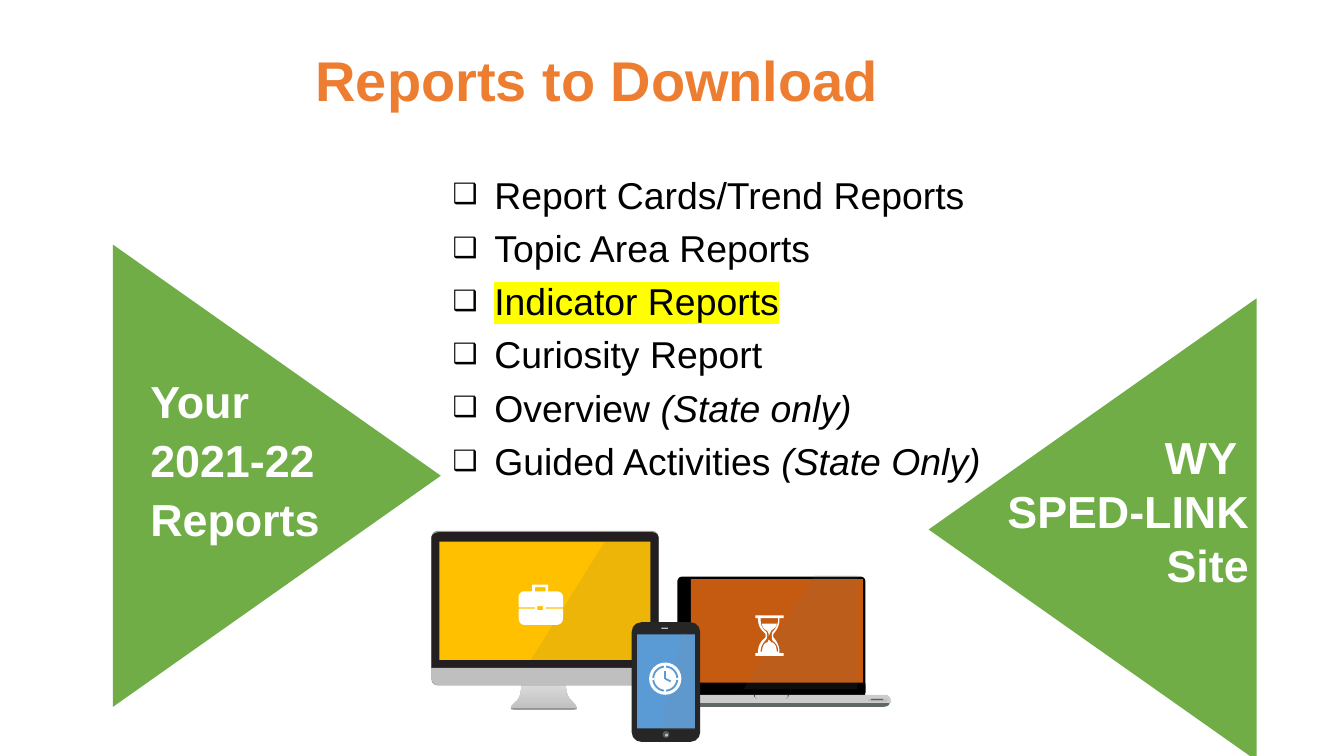
from dataclasses import dataclass
from pptx import Presentation
from pptx.dml.color import RGBColor
from pptx.enum.shapes import MSO_CONNECTOR, MSO_SHAPE
from pptx.enum.text import PP_ALIGN
from pptx.oxml.ns import qn
from pptx.util import Pt
from lxml.etree import SubElement

SCALE = 9144


@dataclass(frozen=True)
class Theme:
    font: str = "Arial"
    title_size: int = 30
    label_size: int = 24
    list_size: int = 20
    title: str = "ED7D31"
    arrow: str = "70AD47"
    ink: str = "000000"
    white: str = "FFFFFF"
    marker: str = "FFFF00"
    amber: str = "FFC000"
    rust: str = "C55A11"
    blue: str = "5B9BD5"
    bezel: str = "231F20"
    phone: str = "262626"
    charcoal: str = "595959"
    slate: str = "5F6767"
    graphite: str = "4D4D4D"
    gray: str = "808080"
    steel: str = "999999"
    silver: str = "BFBFBF"
    pale: str = "CCCCCC"
    shine: str = "D9D9D9"


THEME = Theme()


def px(value):
    return round(value * SCALE)


def rgb(color):
    return RGBColor.from_string(color)


def apply(target, values):
    for name, value in values.items():
        setattr(target, name, value)


def paint(shape, color, alpha=100):
    shape.shadow.inherit = False
    shape.line.fill.background()
    shape.fill.solid()
    shape.fill.fore_color.rgb = rgb(color)
    if alpha < 100:
        tint = shape.fill._xPr.find(".//" + qn("a:srgbClr"))
        SubElement(tint, qn("a:alpha"), val=str(alpha * 1000))
    return shape


def preset(page, kind, box, part, color, corner=None):
    left, top, width, height = part
    shape = page.shapes.add_shape(
        kind, px(box[0] + left), px(box[1] + top), px(width), px(height))
    if corner is not None:
        shape.adjustments[0] = corner
    return paint(shape, color)


def flatten(contour, steps=8):
    points = [contour[0]]
    for step in contour[1:]:
        if len(step) == 2:
            points.append(step)
            continue
        start, first, second, end = points[-1], step[:2], step[2:4], step[4:]
        for index in range(1, steps + 1):
            t = index / steps
            u = 1 - t
            points.append(tuple(
                u**3 * a + 3 * u * u * t * b + 3 * u * t * t * c + t**3 * d
                for a, b, c, d in zip(start, first, second, end)))
    return points


def outline(page, box, contours, color, alpha=100):
    builder = None
    for contour in contours:
        points = [(px(box[0] + x), px(box[1] + y)) for x, y in flatten(contour)]
        if builder is None:
            builder = page.shapes.build_freeform(*points[0], scale=1.0)
        else:
            builder.move_to(*points[0])
        builder.add_line_segments(points[1:], close=True)
    return paint(builder.convert_to_shape(), color, alpha)


def stroke(page, box, start, end, color, weight):
    line = page.shapes.add_connector(
        MSO_CONNECTOR.STRAIGHT, px(box[0] + start[0]), px(box[1] + start[1]),
        px(box[0] + end[0]), px(box[1] + end[1]))
    line.line.color.rgb = rgb(color)
    line.line.width = Pt(weight)
    SubElement(line._element.spPr, qn("a:effectLst"))


def add_span(para, text, color, size, **values):
    span = para.add_run()
    span.text = text
    apply(span.font, {"name": THEME.font, "size": Pt(size), **values})
    span.font.color.rgb = rgb(color)
    return span


def text_frame(page, box):
    frame = page.shapes.add_textbox(*map(px, box)).text_frame
    frame.word_wrap = True
    return frame


def label(page, box, lines, color, size, **values):
    frame = text_frame(page, box)
    for index, line in enumerate(lines):
        para = frame.add_paragraph() if index else frame.paragraphs[0]
        apply(para, values)
        add_span(para, line, color, size, bold=True)


def arrow(page, box, rotation):
    shape = preset(page, MSO_SHAPE.ISOSCELES_TRIANGLE, (0, 0), box, THEME.arrow)
    shape.rotation = rotation


def checklist(page, box, items):
    frame = text_frame(page, box)
    for index, (text, note, marked) in enumerate(items):
        para = frame.add_paragraph() if index else frame.paragraphs[0]
        para.space_after = Pt(4.5)
        props = para._p.get_or_add_pPr()
        props.set("marL", str(px(69)))
        props.set("indent", str(px(-31)))
        SubElement(props, qn("a:buSzPct"), val="75000")
        SubElement(props, qn("a:buFont"), typeface=THEME.font)
        SubElement(props, qn("a:buChar"), char="❑")
        span = add_span(para, text, THEME.ink, THEME.list_size)
        if note:
            add_span(para, note, THEME.ink, THEME.list_size, italic=True)
        if marked:
            run_props = span._r.get_or_add_rPr()
            highlight = SubElement(run_props, qn("a:highlight"))
            SubElement(highlight, qn("a:srgbClr"), val=THEME.marker)
            run_props.find(qn("a:latin")).addprevious(highlight)


def laptop(page, box):
    rounded = MSO_SHAPE.ROUNDED_RECTANGLE
    outline(page, box, [[(1, 93), (177, 93), (177, 95), (177, 98, 172, 98, 172, 98),
                         (5, 98), (4, 98, 2, 97, 1, 95)]], THEME.slate)
    preset(page, rounded, box, (19, 1, 140, 90), THEME.ink, 0.04)
    preset(page, MSO_SHAPE.RECTANGLE, box, (29, 3, 128, 77), THEME.rust)
    outline(page, box, [[(4, 89), (174, 89), (176, 89, 178, 91, 178, 94), (178, 95),
                         (1, 95), (0, 94), (0, 91, 2, 89, 4, 89)]], THEME.pale)
    outline(page, box, [
        [(76, 89), (77, 89), (77, 89, 76, 91, 78, 92), (76, 91, 76, 89, 76, 89)],
        [(102, 89), (101, 89), (101, 89, 102, 91, 100, 92), (102, 91, 102, 89, 102, 89)],
    ], THEME.graphite)
    preset(page, rounded, box, (161, 92, 14, 2), THEME.silver, 0.28)
    preset(page, rounded, box, (163, 92, 9, 1), THEME.charcoal, 0.28)
    outline(page, box, [[(121, 0), (153, 0), (153, 85), (68, 85)]], THEME.gray, 10)


def monitor(page, box):
    stand = outline(page, box, [[
        (104, 126), (100, 123, 100, 115, 100, 115), (67, 115),
        (67, 115, 67, 123, 64, 126), (60, 130, 55, 133, 64, 133), (103, 133),
        (113, 133, 107, 130, 104, 126)]], THEME.silver)
    stand.fill.gradient()
    stand.fill.gradient_angle = 90
    for stop, color in zip(stand.fill.gradient_stops, (THEME.silver, THEME.shine)):
        stop.color.rgb = rgb(color)
    preset(page, MSO_SHAPE.ROUNDED_RECTANGLE, box, (0, 0, 169, 115), THEME.steel, 0.04)
    outline(page, box, [[(0, 102), (0, 5), (0, 3, 3, 1, 6, 1), (164, 1),
                         (167, 1, 169, 3, 169, 5), (169, 102)]], THEME.bezel)
    outline(page, box, [[(59, 132), (108, 132), (109, 133, 107, 133, 103, 133),
                         (64, 133), (60, 133, 59, 133, 59, 132)]], THEME.gray)
    outline(page, box, [[(0, 102), (169, 102), (169, 110), (169, 112, 167, 115, 164, 115),
                         (6, 115), (3, 115, 0, 112, 0, 110)]], THEME.silver)
    preset(page, MSO_SHAPE.RECTANGLE, box, (6, 8, 157, 88), THEME.amber)
    outline(page, box, [[(129, 8), (163, 8), (163, 96), (74, 96)]], THEME.charcoal, 10)


def phone(page, box):
    rounded = MSO_SHAPE.ROUNDED_RECTANGLE
    preset(page, rounded, box, (0, 0, 51, 89), THEME.phone, 0.14)
    preset(page, MSO_SHAPE.RECTANGLE, box, (22, 4, 5, 1), THEME.silver)
    preset(page, MSO_SHAPE.OVAL, box, (23, 81, 5, 5), THEME.charcoal)
    preset(page, rounded, box, (25, 83, 2, 2), THEME.silver)
    preset(page, MSO_SHAPE.RECTANGLE, box, (4, 9, 43, 70), THEME.blue)
    outline(page, box, [[(37, 8), (47, 9), (47, 80), (22, 80)]], THEME.gray, 10)


def hourglass(page, box):
    outline(page, box, [
        [(0, 0), (21, 0), (21, 2), (18, 2), (18, 3), (18, 7, 16, 11, 14, 13),
         (13, 14, 13, 16, 14, 17), (16, 19, 18, 23, 18, 27), (18, 28), (21, 28), (21, 30),
         (0, 30), (0, 28), (2, 28), (2, 27), (2, 23, 4, 19, 7, 17),
         (8, 16, 8, 14, 7, 13), (4, 11, 2, 7, 2, 3), (2, 2), (0, 2)],
        [(4, 2), (4, 3), (4, 7, 5, 10, 8, 12), (9, 13, 9, 17, 8, 18),
         (6, 20, 4, 23, 4, 26), (4, 27), (17, 27), (17, 26), (17, 23, 15, 20, 13, 19),
         (12, 17, 12, 13, 13, 12), (15, 10, 17, 7, 17, 3), (17, 2)],
        [(5, 6), (16, 6), (16, 8, 14, 10, 12, 11), (12, 11, 11, 13, 10, 15),
         (10, 13, 9, 11, 8, 11), (6, 10, 5, 8, 5, 6)],
        [(10, 18), (11, 19, 11, 19, 12, 20), (14, 20, 16, 23, 16, 27), (5, 27),
         (5, 23, 7, 20, 9, 20), (10, 19, 9, 19, 10, 18)],
    ], THEME.white)


def clock(page, box):
    preset(page, MSO_SHAPE.OVAL, box, (0, 0, 24, 24), THEME.white)
    ring = preset(page, MSO_SHAPE.OVAL, box, (3, 3, 18, 18), THEME.white)
    ring.line.color.rgb = rgb(THEME.blue)
    ring.line.width = Pt(1)
    for start, end in (((12, 2), (12, 4)), ((12, 20), (12, 22)),
                       ((2, 12), (4, 12)), ((20, 12), (22, 12))):
        stroke(page, box, start, end, THEME.white, 1)
    for tip in ((12, 6), (16, 14)):
        stroke(page, box, (12, 12), tip, THEME.blue, 1)


def briefcase(page, box):
    outline(page, box, [
        [(14, 16), (14, 19), (18, 19), (18, 16)],
        [(12, 3), (12, 5), (20, 5), (20, 3), (20, 2, 20, 2, 19, 2), (13, 2),
         (12, 2, 12, 2, 12, 3)],
        [(11, 0), (21, 0), (22, 0, 22, 0, 22, 1), (22, 5), (28, 5),
         (31, 5, 33, 7, 33, 9), (33, 17), (20, 17), (20, 18), (33, 18), (33, 25),
         (33, 28, 31, 30, 28, 30), (4, 30), (2, 30, 0, 28, 0, 25), (0, 18), (12, 18),
         (12, 17), (0, 17), (0, 9), (0, 7, 2, 5, 4, 5), (10, 5), (10, 1),
         (10, 0, 10, 0, 11, 0)],
    ], THEME.white)


def reports_slide(page):
    arrow(page, (34, 232, 344, 244), 90)
    arrow(page, (641, 272, 344, 244), 270)
    for draw, box in ((laptop, (485, 428)), (monitor, (321, 395)), (phone, (470, 463)),
                      (hourglass, (562, 458)), (clock, (483, 493)), (briefcase, (386, 435))):
        draw(page, box)
    label(page, (731, 315, 208, 131), ["WY ", "SPED-LINK Site"], THEME.white,
          THEME.label_size, alignment=PP_ALIGN.RIGHT)
    label(page, (102, 269, 166, 140), ["Your 2021-22 Reports"], THEME.white,
          THEME.label_size, line_spacing=1.1)
    checklist(page, (289, 123, 457, 359), [
        ("Report Cards/Trend Reports", "", False),
        ("Topic Area Reports", "", False),
        ("Indicator Reports", "", True),
        ("Curiosity Report", "", False),
        ("Overview ", "(State only)", False),
        ("Guided Activities ", "(State Only)", False)])
    label(page, (225, 29, 773, 59), ["Reports to Download"], THEME.title, THEME.title_size)


def main():
    deck = Presentation()
    apply(deck, {"slide_width": px(1000), "slide_height": px(1000) * 9 // 16})
    reports_slide(deck.slides.add_slide(deck.slide_layouts[6]))
    deck.save("out.pptx")


if __name__ == "__main__":
    main()
